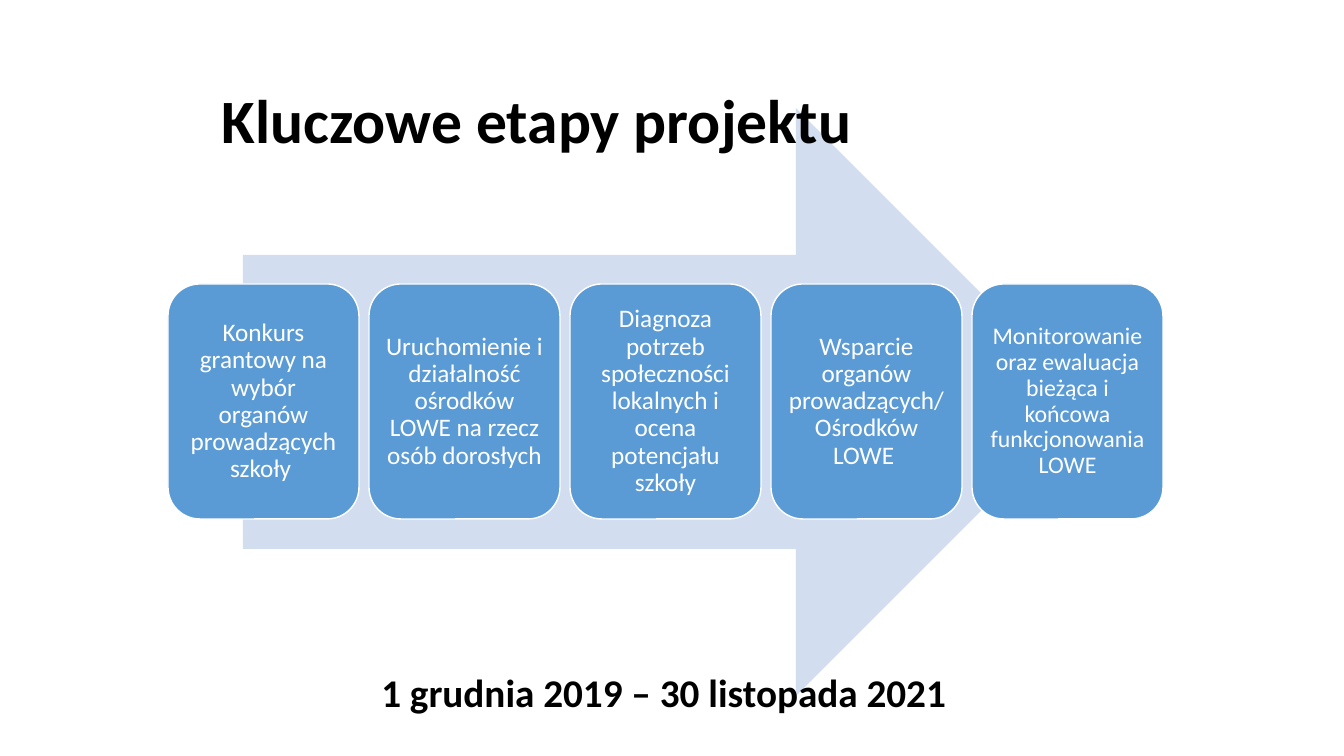
from pptx import Presentation
from pptx import util as u
from pptx.dml.color import RGBColor
from pptx.enum import shapes, text

TITLE = "Kluczowe etapy projektu"
DATES = "1 grudnia 2019 – 30 listopada 2021 "
STAGES = [
    ("Konkurs grantowy na wybór organów prowadzących szkoły ", 18),
    ("Uruchomienie i działalność ośrodków LOWE na rzecz osób dorosłych", 18),
    ("Diagnoza potrzeb społeczności lokalnych i ocena potencjału szkoły", 18),
    ("Wsparcie organów prowadzących/Ośrodków LOWE ", 18),
    ("Monitorowanie oraz ewaluacja bieżąca i końcowa funkcjonowania LOWE", 17),
]
COLORS = {"arrow": "D2DEEF", "stage": "5B9BD5", "white": "FFFFFF", "black": "000000"}

SLIDE_W, SLIDE_H = 1344, 756
ARROW_BOX = (243, 108, 847, 588)
TITLE_BOX = (212, 85, 907, 78)
DATES_BOX = (196, 663, 944, 57)
STAGE_LEFT, STAGE_TOP, STAGE_W, STAGE_H, STAGE_GAP = 168, 284, 191, 235, 10
STAGE_INSET = 7


def px(length):
    return u.Emu(round(length * 914400 / 100.8))


def color(name):
    return RGBColor.from_string(COLORS[name])


def set_all(target, values):
    for key, value in values.items():
        setattr(target, key, value)


def add_block(slide, preset, box, fill):
    block = slide.shapes.add_shape(preset, *map(px, box))
    block.shadow.inherit = False
    block.fill.solid()
    block.fill.fore_color.rgb = color(fill)
    return block


def write(frame, words, size, ink, frame_format, paragraph_format, bold=False):
    set_all(frame, {"word_wrap": True, **frame_format})
    paragraph = frame.paragraphs[0]
    set_all(paragraph, paragraph_format)
    run = paragraph.add_run()
    run.text = words
    set_all(run.font, {"name": "Calibri", "size": u.Pt(size), "bold": bold})
    run.font.color.rgb = color(ink)


def main():
    deck = Presentation()
    set_all(deck, {"slide_width": px(SLIDE_W), "slide_height": px(SLIDE_H)})
    slide = deck.slides.add_slide(deck.slide_layouts[6])

    arrow = add_block(slide, shapes.MSO_SHAPE.RIGHT_ARROW, ARROW_BOX, "arrow")
    arrow.line.fill.background()

    middle = {"vertical_anchor": text.MSO_ANCHOR.MIDDLE}
    centred = {"alignment": text.PP_ALIGN.CENTER}
    sides = ("left", "top", "right", "bottom")
    insets = {f"margin_{side}": px(STAGE_INSET) for side in sides}

    for index, (words, size) in enumerate(STAGES):
        left = STAGE_LEFT + index * (STAGE_W + STAGE_GAP)
        stage = add_block(slide, shapes.MSO_SHAPE.ROUNDED_RECTANGLE,
                          (left, STAGE_TOP, STAGE_W, STAGE_H), "stage")
        stage.line.color.rgb = color("white")
        stage.line.width = u.Pt(1)
        write(stage.text_frame, words, size, "white",
              {**middle, **insets}, {**centred, "line_spacing": 0.9})

    title = slide.shapes.add_textbox(*map(px, TITLE_BOX))
    write(title.text_frame, TITLE, 44, "black", middle, {"line_spacing": 0.9}, bold=True)

    dates = slide.shapes.add_textbox(*map(px, DATES_BOX))
    write(dates.text_frame, DATES, 28, "black",
          {"auto_size": text.MSO_AUTO_SIZE.SHAPE_TO_FIT_TEXT}, centred, bold=True)

    deck.save("out.pptx")


if __name__ == "__main__":
    main()
